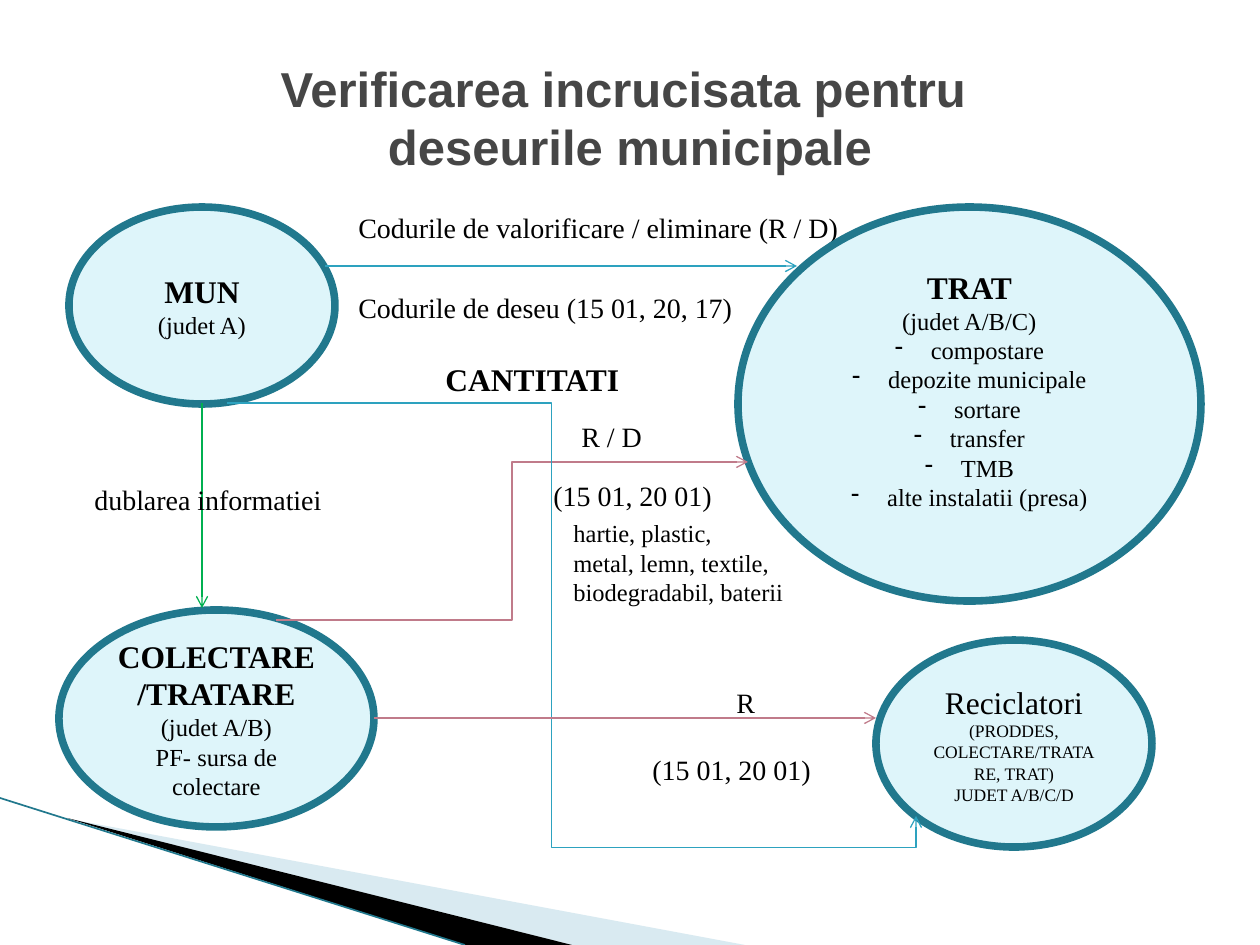
from dataclasses import dataclass

from lxml import etree
from pptx import Presentation
from pptx.dml.color import RGBColor
from pptx.enum import shapes, text
from pptx.oxml.ns import qn
from pptx.util import Emu, Pt

PX = 914400 / 126  # EMU in one px


@dataclass(frozen=True)
class Theme:
    heading_font: str = "Arial"
    body_font: str = "Times New Roman"
    heading: str = "464646"
    ink: str = "000000"
    node_fill: str = "DEF5FA"
    node_line: str = "21788D"
    pale: str = "A0CBDC"
    blue: str = "2DA2BF"
    green: str = "00B050"
    rose: str = "C07B8A"
    title_size: int = 28
    large: int = 18
    label: int = 16
    small: int = 14
    tiny: int = 10


T = Theme()


def px(n):
    return Emu(round(n * PX))


def rgb(value):
    return RGBColor.from_string(value)


def add_para(tf, content, size=T.label, bold=False, font=T.body_font,
             color=T.ink, align=text.PP_ALIGN.LEFT, bullet=None, before=0):
    """Write one paragraph, using the empty first one when it is free."""
    p = tf.paragraphs[0]
    if p.text:
        p = tf.add_paragraph()
        p.space_before = Pt(before)
    p.text = content
    p.alignment = align
    if bullet:
        pPr = p._p.get_or_add_pPr()
        pPr.set("marL", str(px(36)))
        pPr.set("indent", str(-px(36)))
        etree.SubElement(pPr, qn("a:buChar")).set("char", bullet)
    for r in p.runs:
        r.font.name = font
        r.font.size = Pt(size)
        r.font.bold = bold
        r.font.color.rgb = rgb(color)
    return p


def add_title(slide, content):
    sp = slide.shapes.title
    sp.left, sp.top, sp.width, sp.height = px(63), px(38), px(1134), px(158)
    sp.text_frame.vertical_anchor = text.MSO_ANCHOR.MIDDLE
    add_para(sp.text_frame, content, size=T.title_size, bold=True,
             font=T.heading_font, color=T.heading, align=text.PP_ALIGN.CENTER)


def add_label(slide, box, lines, wrap=True, **fmt):
    tf = slide.shapes.add_textbox(*map(px, box)).text_frame
    tf.word_wrap = wrap
    for line in lines:
        add_para(tf, line, **fmt)


def add_node(slide, box, lines, bottom=6):
    """Ellipse with centred lines, each given as (text, format)."""
    sp = slide.shapes.add_shape(shapes.MSO_SHAPE.OVAL, *map(px, box))
    sp.shadow.inherit = False
    sp.fill.solid()
    sp.fill.fore_color.rgb = rgb(T.node_fill)
    sp.line.color.rgb = rgb(T.node_line)
    sp.line.width = Pt(4.33)
    tf = sp.text_frame
    tf.word_wrap = True
    tf.vertical_anchor = text.MSO_ANCHOR.MIDDLE
    tf.margin_bottom = px(bottom)
    for content, fmt in lines:
        add_para(tf, content, align=text.PP_ALIGN.CENTER, **fmt)


def add_line(slide, ends, color, width=0.75, arrow=True, preset=None, adjust=()):
    kind = shapes.MSO_CONNECTOR.ELBOW if preset else shapes.MSO_CONNECTOR.STRAIGHT
    c = slide.shapes.add_connector(kind, *map(px, ends))
    c.line.color.rgb = rgb(color)
    c.line.width = Pt(width)
    spPr = c._element.spPr
    if arrow:
        etree.SubElement(spPr.find(qn("a:ln")), qn("a:tailEnd")).set("type", "arrow")
    etree.SubElement(spPr, qn("a:effectLst"))
    if preset:
        geom = spPr.find(qn("a:prstGeom"))
        geom.set("prst", preset)
        guides = geom.find(qn("a:avLst"))
        for i, value in enumerate(adjust, 1):
            gd = etree.SubElement(guides, qn("a:gd"))
            gd.set("name", f"adj{i}")
            gd.set("fmla", f"val {value}")


def add_wedge(slide, points, color, opacity=100):
    builder = slide.shapes.build_freeform(*points[0], scale=PX)
    builder.add_line_segments(points[1:], close=True)
    sp = builder.convert_to_shape()
    sp.shadow.inherit = False
    sp.fill.solid()
    sp.fill.fore_color.rgb = rgb(color)
    sp.line.fill.background()
    if opacity < 100:
        clr = sp._element.spPr.find(qn("a:solidFill"))[0]
        etree.SubElement(clr, qn("a:alpha")).set("val", str(opacity * 1000))


def main():
    prs = Presentation()
    prs.slide_width, prs.slide_height = px(1260), px(945)
    slide = prs.slides.add_slide(prs.slide_layouts[5])

    # Corner decoration
    add_wedge(slide, [(69, 819), (745, 945), (572, 945)], T.pale, opacity=40)
    add_wedge(slide, [(67, 818), (572, 945), (465, 945)], T.ink)
    add_line(slide, (0, 798, 465, 945), T.node_line, width=0.95, arrow=False)

    add_title(slide, "Verificarea incrucisata pentru \vdeseurile municipale")

    # Codes sent from MUN to TRAT
    add_label(slide, (346, 204, 530, 125),
              ["Codurile de valorificare / eliminare (R / D)",
               "Codurile de deseu (15 01, 20, 17)"], before=27)

    # Operators
    head = dict(size=T.large, bold=True)
    body = dict(size=T.small)
    item = dict(size=T.small, bullet="-")
    note = dict(size=T.tiny)
    add_node(slide, (69, 207, 266, 197), [("MUN", head), ("(judet A)", body)])
    add_node(slide, (59, 610, 315, 217),
             [("COLECTARE/TRATARE", head), ("(judet A/B)", body),
              ("PF- sursa de colectare", body)])
    treatments = ["compostare", "depozite municipale", "sortare", "transfer",
                  "TMB", "alte instalatii (presa)"]
    add_node(slide, (738, 207, 463, 394),
             [("TRAT", head), ("(judet A/B/C)", body)]
             + [(name, item) for name in treatments], bottom=35)
    add_node(slide, (876, 640, 276, 207),
             [("Reciclatori", dict(size=T.large)),
              ("(PRODDES, COLECTARE/TRATARE, TRAT)", note),
              ("JUDET A/B/C/D", note)])

    # Flows between operators
    add_line(slide, (325, 266, 797, 266), T.blue)
    add_line(slide, (202, 403, 202, 608), T.green)
    add_line(slide, (276, 620, 748, 462), T.rose,
             preset="bentConnector3", adjust=(50000,))
    add_line(slide, (227, 403, 916, 816), T.blue,
             preset="bentConnector4", adjust=(47100, 107600))
    add_line(slide, (374, 718, 876, 718), T.rose)

    # Flow labels
    add_label(slide, (82, 476, 344, 47), ["dublarea informatiei"])
    add_label(slide, (433, 354, 227, 50), ["CANTITATI"], **head)
    add_label(slide, (569, 413, 120, 47), ["R / D"])
    add_label(slide, (541, 472, 207, 47), ["(15 01, 20 01)"])
    add_label(slide, (561, 512, 295, 120),
              ["hartie, plastic,", "metal, lemn, textile,", "biodegradabil, baterii"],
              wrap=False, size=T.small)
    add_label(slide, (724, 679, 60, 47), ["R"])
    add_label(slide, (640, 746, 207, 47), ["(15 01, 20 01)"])

    prs.save("out.pptx")


if __name__ == "__main__":
    main()
